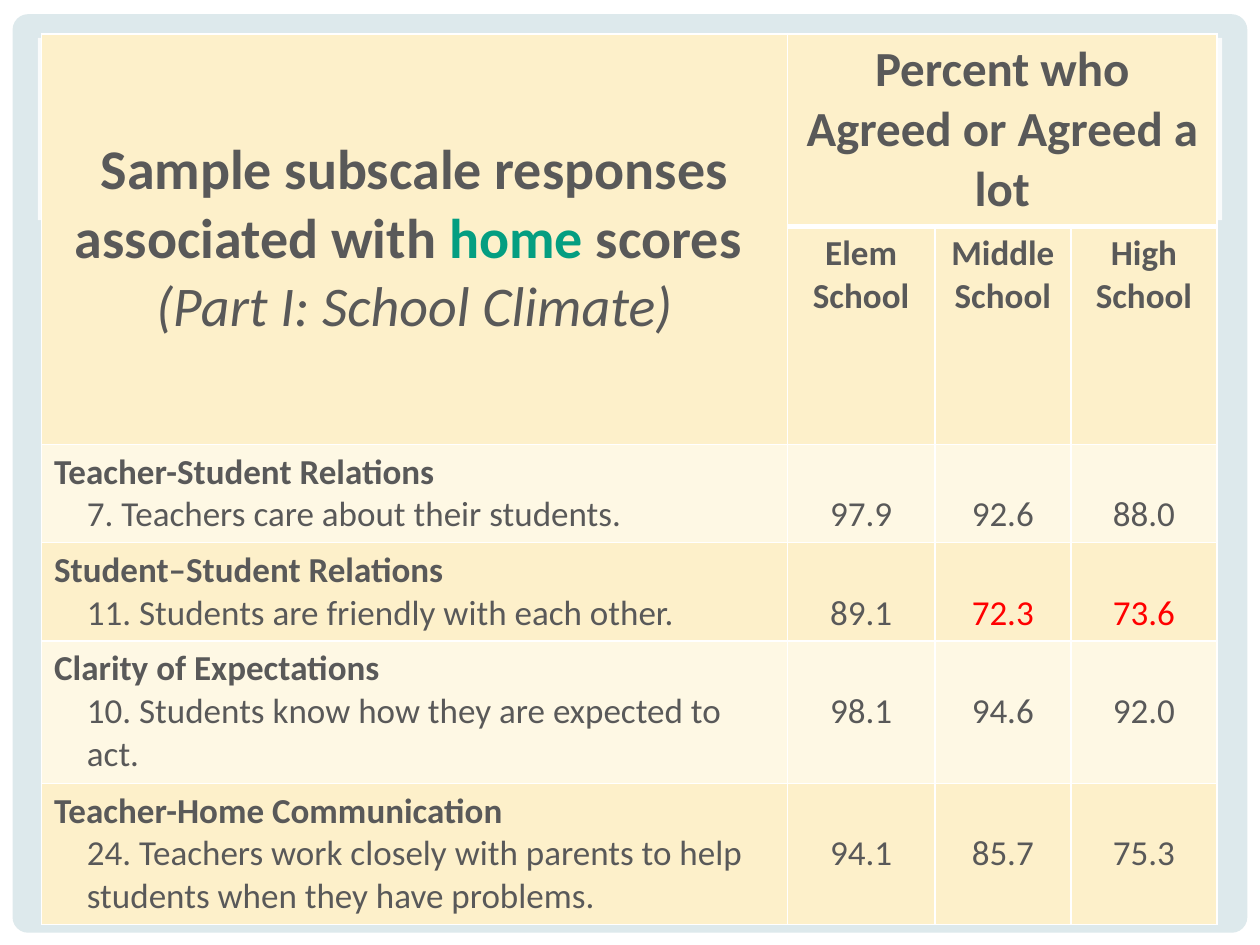
from lxml import etree
from pptx import Presentation
from pptx.dml.color import RGBColor
from pptx.enum.shapes import MSO_SHAPE
from pptx.enum.text import MSO_ANCHOR, PP_ALIGN
from pptx.oxml.ns import qn
from pptx.util import Inches, Pt

RECT, ROUNDED = MSO_SHAPE.RECTANGLE, MSO_SHAPE.ROUNDED_RECTANGLE
CENTER, LEFT = PP_ALIGN.CENTER, PP_ALIGN.LEFT
MIDDLE, TOP = MSO_ANCHOR.MIDDLE, MSO_ANCHOR.TOP
WIDTH, HEIGHT = Inches(10), Inches(7.5)
COLORS = {"white": "FFFFFF", "mist": "DDE9EC", "sand": "FDF0CA",
          "cream": "FEF8E4", "text": "595959", "home": "049E81", "low": "FF0000"}
COLUMNS = [5.92, 1.17, 1.08, 1.16]
ROWS = [1.52, 1.73, 0.78, 0.78, 1.13, 1.11]
BODY = {"size": Pt(20), "bold": False}
STRONG = {"size": Pt(20), "bold": True}
TITLE = {"size": Pt(32), "bold": True}
SUBTITLE = {"size": Pt(32), "bold": False, "italic": True}
HEADING = {"size": Pt(28), "bold": True}
LEVELS = ["Elem\nSchool", "Middle School", "High School"]
RESPONSES = [
    ("Teacher-Student Relations", "7. Teachers care about their students.",
     ["97.9", "92.6", "88.0"]),
    ("Student–Student Relations", "11. Students are friendly with each other.",
     ["89.1", "72.3", "73.6"]),
    ("Clarity of Expectations", "10. Students know how they are expected to act.",
     ["98.1", "94.6", "92.0"]),
    ("Teacher-Home Communication",
     "24. Teachers work closely with parents to help students when they have problems.",
     ["94.1", "85.7", "75.3"]),
]
LOW_SCORE = 75


def rgb(name):
    """Return the named colour."""
    return RGBColor.from_string(COLORS[name])


def add_panel(slide, preset, left, top, width, height, color, opacity=100):
    """Add a borderless panel placed by shares of the slide's size."""
    panel = slide.shapes.add_shape(preset, int(left * WIDTH), int(top * HEIGHT),
                                   int(width * WIDTH), int(height * HEIGHT))
    panel.shadow.inherit = False
    panel.fill.solid()
    panel.fill.fore_color.rgb = rgb(color)
    panel.line.fill.background()
    if opacity < 100:
        tint = panel.fill._xPr.find(".//" + qn("a:srgbClr"))
        etree.SubElement(tint, qn("a:alpha"), val=str(opacity * 1000))
    return panel


def add_words(paragraph, words, style, color="text"):
    """Append a run with the given font values."""
    run = paragraph.add_run()
    run.text = words
    run.font.name = "Calibri"
    run.font.color.rgb = rgb(color)
    for name, value in style.items():
        setattr(run.font, name, value)


def paint_cell(cell, color, rule_top=1, rule_bottom=1):
    """Fill a cell and draw its white rules."""
    cell.fill.solid()
    cell.fill.fore_color.rgb = rgb(color)
    rules = {"a:lnL": 1, "a:lnR": 1, "a:lnT": rule_top, "a:lnB": rule_bottom}
    for position, (tag, points) in enumerate(rules.items()):
        rule = etree.Element(qn(tag), w=str(Pt(points)))
        solid = etree.SubElement(rule, qn("a:solidFill"))
        etree.SubElement(solid, qn("a:srgbClr"), val=COLORS["white"])
        cell._tc.get_or_add_tcPr().insert(position, rule)


def write_cell(cell, lines, align=CENTER, anchor=TOP):
    """Write each line, a list of run arguments, as a paragraph."""
    cell.vertical_anchor = anchor
    frame = cell.text_frame
    for index, runs in enumerate(lines):
        paragraph = frame.add_paragraph() if index else frame.paragraphs[0]
        paragraph.alignment = align
        for run in runs:
            add_words(paragraph, *run)


def add_grid(slide):
    """Add the painted table with its merged header cells."""
    table = slide.shapes.add_table(
        len(ROWS), len(COLUMNS), Inches(0.33), Inches(0.27),
        Inches(sum(COLUMNS)), Inches(sum(ROWS))).table
    table.first_row = table.horz_banding = False
    for column, width in zip(table.columns, COLUMNS):
        column.width = Inches(width)
    for index, (row, height) in enumerate(zip(table.rows, ROWS)):
        row.height = Inches(height)
        color = "cream" if index in (2, 4) else "sand"
        for position, cell in enumerate(row.cells):
            paint_cell(cell, color, 3 if position and index == 1 else 1,
                       3 if position and index == 0 else 1)
    table.cell(0, 0).merge(table.cell(1, 0))
    table.cell(0, 1).merge(table.cell(0, 3))
    return table


def write_header(table):
    """Write the title, the percent heading and the school levels."""
    title = table.cell(0, 0)
    write_cell(title, [[
        ("Sample subscale responses associated with ", TITLE),
        ("home ", TITLE, "home"), ("scores ", TITLE)]], anchor=MIDDLE)
    paragraph = title.text_frame.paragraphs[0]
    paragraph.add_line_break()
    add_words(paragraph, "(Part I: School Climate)", SUBTITLE)
    write_cell(table.cell(0, 1), [[("Percent who Agreed or Agreed a lot", HEADING)]])
    for column, level in enumerate(LEVELS, 1):
        write_cell(table.cell(1, column),
                   [[(line, STRONG)] for line in level.split("\n")])


def write_response(table, row, subscale, statement, scores):
    """Write one subscale with its statement and scores."""
    label = table.cell(row, 0)
    write_cell(label, [[(subscale, STRONG)], [(statement, BODY)]], LEFT)
    label.text_frame.paragraphs[1]._p.get_or_add_pPr().set("marL", str(Inches(0.26)))
    for column, score in enumerate(scores, 1):
        cell = table.cell(row, column)
        cell.margin_top = Inches(0.39)
        color = "low" if float(score) < LOW_SCORE else "text"
        write_cell(cell, [[(score, BODY, color)]])


def main():
    """Build the slide and save it."""
    deck = Presentation()
    deck.slide_width, deck.slide_height = WIDTH, HEIGHT
    slide = deck.slides.add_slide(deck.slide_layouts[6])
    add_panel(slide, RECT, 0, 0, 1, 1, "white")
    backdrop = add_panel(slide, ROUNDED, 0.01, 0.015, 0.98, 0.972, "mist")
    backdrop.adjustments[0] = 0.017
    add_panel(slide, RECT, 0.03, 0.04, 0.94, 0.193, "white", 83)
    add_panel(slide, RECT, 0.041, 0.055, 0.917, 0.163, "white")
    table = add_grid(slide)
    write_header(table)
    for row, response in enumerate(RESPONSES, 2):
        write_response(table, row, *response)
    deck.save("out.pptx")


if __name__ == "__main__":
    main()
